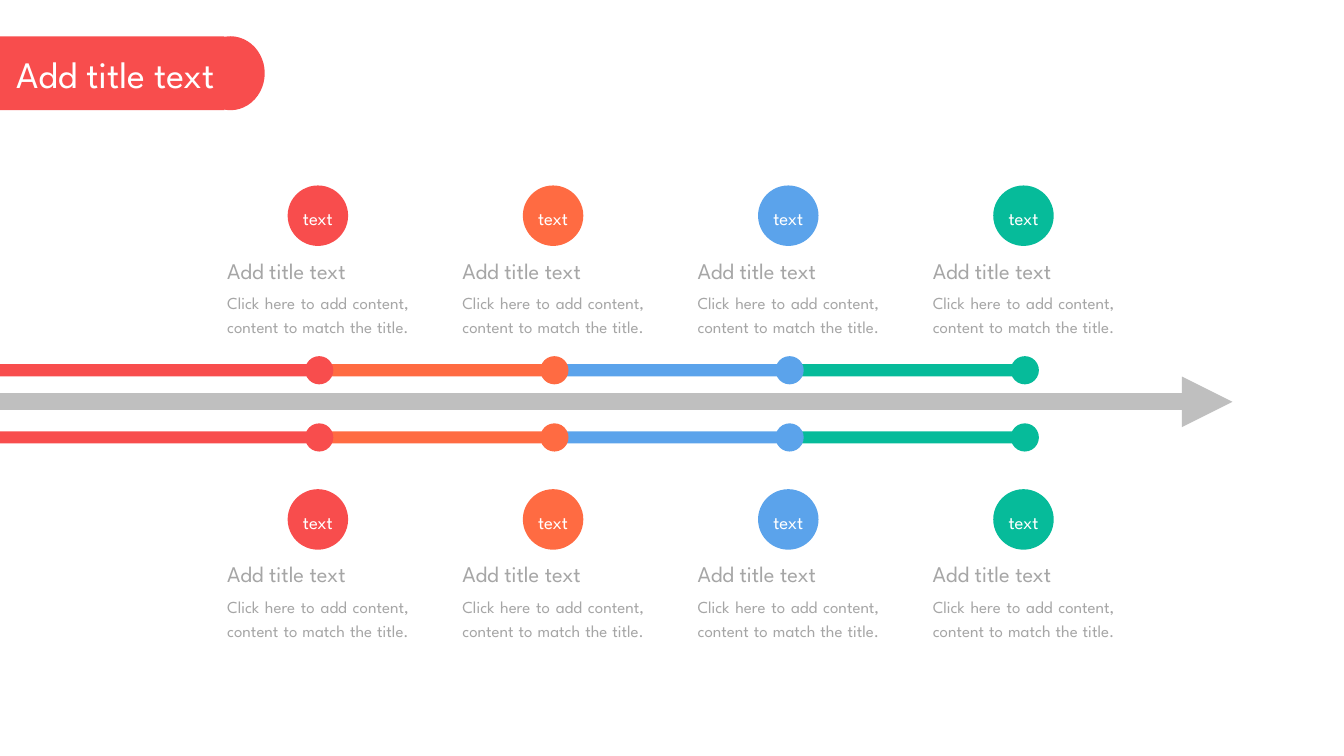
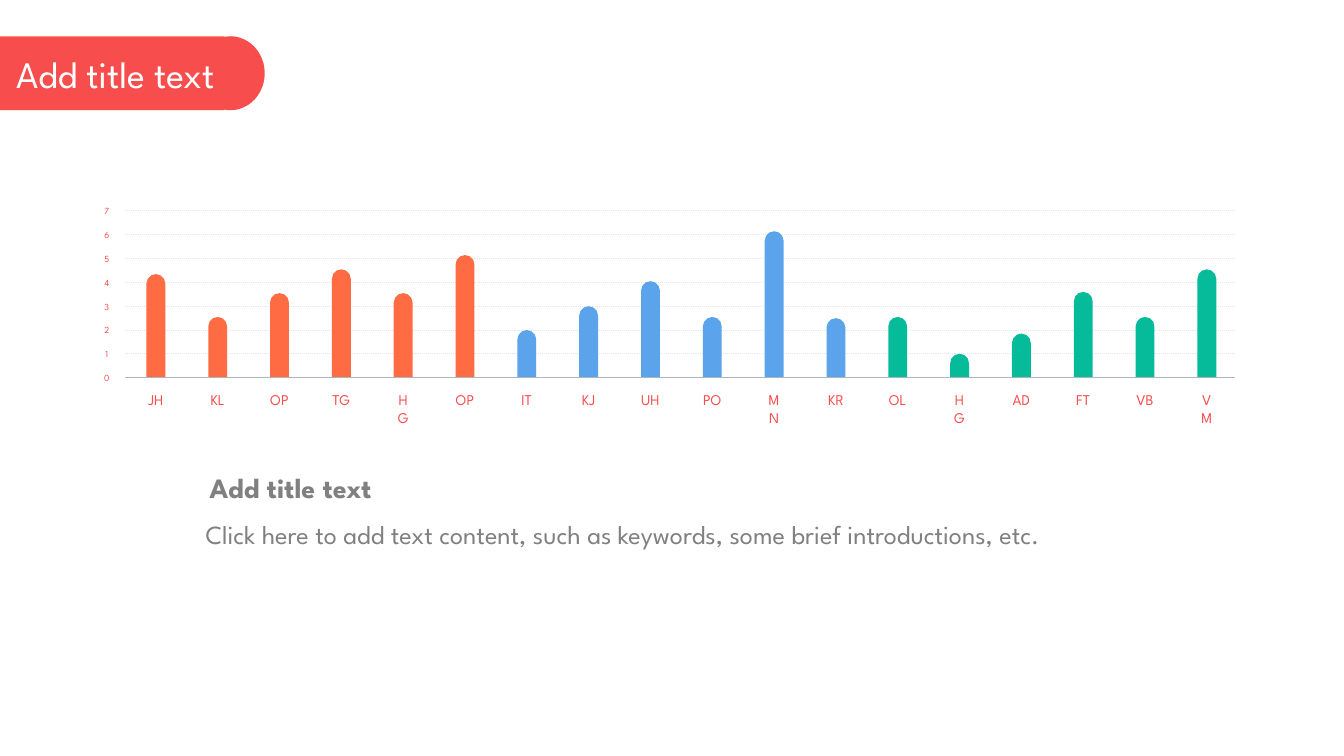
from dataclasses import dataclass

from lxml import etree
from pptx import Presentation
from pptx.dml.color import RGBColor
from pptx.enum.dml import MSO_LINE
from pptx.enum.shapes import MSO_CONNECTOR, MSO_SHAPE
from pptx.enum.text import MSO_ANCHOR, MSO_AUTO_SIZE, PP_ALIGN
from pptx.oxml.ns import qn
from pptx.util import Inches, Pt

FONT = "League Spartan"
COLORS = {
    "red": "F84D4D",
    "orange": "FF6B42",
    "blue": "5BA3EB",
    "green": "06BB9A",
    "white": "FFFFFF",
    "arrow": "BFBFBF",
    "light_text": "A6A6A6",
    "dark_text": "808080",
    "grid": "E4E6EA",
    "axis": "ADB5BF",
}
TITLE = "Add title text"
# The closing space lets the justified last line fill its width.
DETAIL = "Click here to add content, content to match the title. "
CAPTION = "Click here to add text content, such as keywords, some brief introductions, etc."
NO_INSETS = (0, 0)
DEFAULT_INSETS = (0.1, 0.05)


@dataclass(frozen=True)
class TextStyle:
    size: float
    color: str
    align: PP_ALIGN | None = None
    line_spacing: float | None = None
    bold: bool = False
    insets: tuple[float, float] = NO_INSETS
    anchor: MSO_ANCHOR = MSO_ANCHOR.TOP


@dataclass(frozen=True)
class Box:
    left: float
    top: float
    width: float
    height: float

    def lengths(self) -> list[int]:
        return [Inches(n) for n in (self.left, self.top, self.width, self.height)]


@dataclass(frozen=True)
class MilestoneRow:
    circle_top: float
    track_top: float
    heading_width: float
    heading_align: PP_ALIGN | None


@dataclass(frozen=True)
class Bar:
    label: str
    value: float
    color: str


TITLE_STYLE = TextStyle(20, "white", anchor=MSO_ANCHOR.MIDDLE)
CIRCLE_STYLE = TextStyle(10, "white", PP_ALIGN.CENTER, 1.2, anchor=MSO_ANCHOR.MIDDLE)
DETAIL_STYLE = TextStyle(9, "light_text", PP_ALIGN.JUSTIFY, 1.2)
SCALE_STYLE = TextStyle(5, "red", PP_ALIGN.CENTER, insets=DEFAULT_INSETS)
CATEGORY_STYLE = TextStyle(8, "red", PP_ALIGN.CENTER, insets=DEFAULT_INSETS)
CAPTION_STYLE = TextStyle(14, "dark_text", insets=(0.11, 0.05))
CAPTION_HEADING_STYLE = TextStyle(15, "dark_text", bold=True, insets=(0.11, 0.05))

MILESTONE_COLORS = ["red", "orange", "blue", "green"]
MILESTONE_LEFT, MILESTONE_PITCH = 1.69, 1.75
MILESTONE_ROWS = [
    MilestoneRow(1.38, 2.65, 1.35, None),
    MilestoneRow(3.64, 3.15, 1.2, PP_ALIGN.JUSTIFY),
]

BARS = [
    Bar("JH", 4.35, "orange"),
    Bar("KL", 2.55, "orange"),
    Bar("OP", 3.55, "orange"),
    Bar("TG", 4.55, "orange"),
    Bar("HG", 3.55, "orange"),
    Bar("OP", 5.15, "orange"),
    Bar("IT", 2, "blue"),
    Bar("KJ", 3, "blue"),
    Bar("UH", 4.05, "blue"),
    Bar("PO", 2.55, "blue"),
    Bar("MN", 6.15, "blue"),
    Bar("KR", 2.5, "blue"),
    Bar("OL", 2.55, "green"),
    Bar("HG", 1, "green"),
    Bar("AD", 1.85, "green"),
    Bar("FT", 3.6, "green"),
    Bar("VB", 2.55, "green"),
    Bar("VM", 4.55, "green"),
]
SCALE_MAX = 7
PLOT_LEFT, PLOT_RIGHT = 0.93, 9.19
PLOT_TOP, BASELINE = 1.57, 2.81
UNIT_HEIGHT = (BASELINE - PLOT_TOP) / SCALE_MAX
BAR_LEFT, BAR_WIDTH, BAR_PITCH = 1.09, 0.14, 0.46


def rgb(color: str) -> RGBColor:
    return RGBColor.from_string(COLORS[color])


def write_text(shape, text: str, style: TextStyle) -> None:
    frame = shape.text_frame
    frame.word_wrap = True
    frame.vertical_anchor = style.anchor
    frame.margin_left = frame.margin_right = Inches(style.insets[0])
    frame.margin_top = frame.margin_bottom = Inches(style.insets[1])
    frame.text = text
    paragraph = frame.paragraphs[0]
    paragraph.alignment = style.align
    paragraph.line_spacing = style.line_spacing
    for run in paragraph.runs:
        run.font.name = FONT
        run.font.size = Pt(style.size)
        run.font.bold = style.bold
        run.font.color.rgb = rgb(style.color)


def add_text(slide, box: Box, text: str, style: TextStyle) -> None:
    shape = slide.shapes.add_textbox(*box.lengths())
    write_text(shape, text, style)
    shape.text_frame.auto_size = MSO_AUTO_SIZE.SHAPE_TO_FIT_TEXT


def add_filled(slide, kind: MSO_SHAPE, box: Box, color: str):
    shape = slide.shapes.add_shape(kind, *box.lengths())
    shape.shadow.inherit = False
    shape.fill.solid()
    shape.fill.fore_color.rgb = rgb(color)
    shape.line.fill.background()
    return shape


def add_horizontal_line(slide, left: float, right: float, y: float, color: str, weight: float):
    line = slide.shapes.add_connector(
        MSO_CONNECTOR.STRAIGHT, Inches(left), Inches(y), Inches(right), Inches(y)
    )
    line.line.color.rgb = rgb(color)
    line.line.width = Pt(weight)
    etree.SubElement(line.element.spPr, qn("a:effectLst"))
    return line


def add_titled_slide(presentation):
    slide = presentation.slides.add_slide(presentation.slide_layouts[6])
    add_filled(slide, MSO_SHAPE.RECTANGLE, Box(0, 0.27, 1.67, 0.55), "red")
    add_filled(slide, MSO_SHAPE.OVAL, Box(1.46, 0.27, 0.51, 0.55), "red")
    add_text(slide, Box(0.12, 0.38, 1.85, 0.34), TITLE, TITLE_STYLE)
    return slide


def add_milestone(slide, row: MilestoneRow, index: int, color: str) -> None:
    left = MILESTONE_LEFT + index * MILESTONE_PITCH
    top = row.circle_top
    add_text(slide, Box(left, top + 0.77, 1.35, 0.53), DETAIL, DETAIL_STYLE)
    heading_style = TextStyle(12, "light_text", row.heading_align, 1.2)
    add_text(slide, Box(left, top + 0.49, row.heading_width, 0.22), TITLE, heading_style)
    circle = add_filled(slide, MSO_SHAPE.OVAL, Box(left + 0.45, top, 0.45, 0.45), color)
    write_text(circle, "text", CIRCLE_STYLE)


def add_track_segment(slide, row: MilestoneRow, index: int, color: str) -> None:
    """Draw one stretch of a track and the dot that closes it."""
    dot_left = 2.27 + index * MILESTONE_PITCH
    start = dot_left - 1.64 if index else 0
    end = dot_left + 0.09
    add_filled(slide, MSO_SHAPE.RECTANGLE, Box(start, row.track_top + 0.06, end - start, 0.09), color)
    add_filled(slide, MSO_SHAPE.OVAL, Box(dot_left, row.track_top, 0.21, 0.21), color)


def build_timeline(presentation) -> None:
    slide = add_titled_slide(presentation)
    arrow = add_horizontal_line(slide, 0, 9.17, 2.99, "arrow", 9)
    arrow_line = arrow.element.spPr.find(qn("a:ln"))
    etree.SubElement(arrow_line, qn("a:tailEnd"), type="triangle")
    for row in MILESTONE_ROWS:
        for index, color in enumerate(MILESTONE_COLORS):
            add_milestone(slide, row, index, color)
        # Later segments go underneath the dots of earlier ones.
        for index, color in reversed(list(enumerate(MILESTONE_COLORS))):
            add_track_segment(slide, row, index, color)


def build_bars(presentation) -> None:
    slide = add_titled_slide(presentation)
    for value in range(SCALE_MAX + 1):
        y = BASELINE - value * UNIT_HEIGHT
        if value:
            grid_line = add_horizontal_line(slide, PLOT_LEFT, PLOT_RIGHT, y, "grid", 0.5)
            grid_line.line.dash_style = MSO_LINE.ROUND_DOT
        add_text(slide, Box(0.75, y - 0.09, 0.09, 0.19), str(value), SCALE_STYLE)
    for index, bar in enumerate(BARS):
        left = BAR_LEFT + index * BAR_PITCH
        height = bar.value * UNIT_HEIGHT
        column = add_filled(
            slide,
            MSO_SHAPE.ROUND_2_SAME_RECTANGLE,
            Box(left, BASELINE - height, BAR_WIDTH, height),
            bar.color,
        )
        column.adjustments[0] = 0.5
        add_text(slide, Box(left - 0.1, 2.86, 0.34, 0.37), bar.label, CATEGORY_STYLE)
    add_horizontal_line(slide, PLOT_LEFT, PLOT_RIGHT, BASELINE, "axis", 0.5)
    add_text(slide, Box(1.42, 3.81, 7.44, 0.58), CAPTION, CAPTION_STYLE)
    add_text(slide, Box(1.45, 3.45, 3.13, 0.37), TITLE, CAPTION_HEADING_STYLE)


def main() -> None:
    presentation = Presentation()
    presentation.slide_width = Inches(10)
    presentation.slide_height = Inches(10 * 9 / 16)
    build_timeline(presentation)
    build_bars(presentation)
    presentation.save("out.pptx")


if __name__ == "__main__":
    main()
